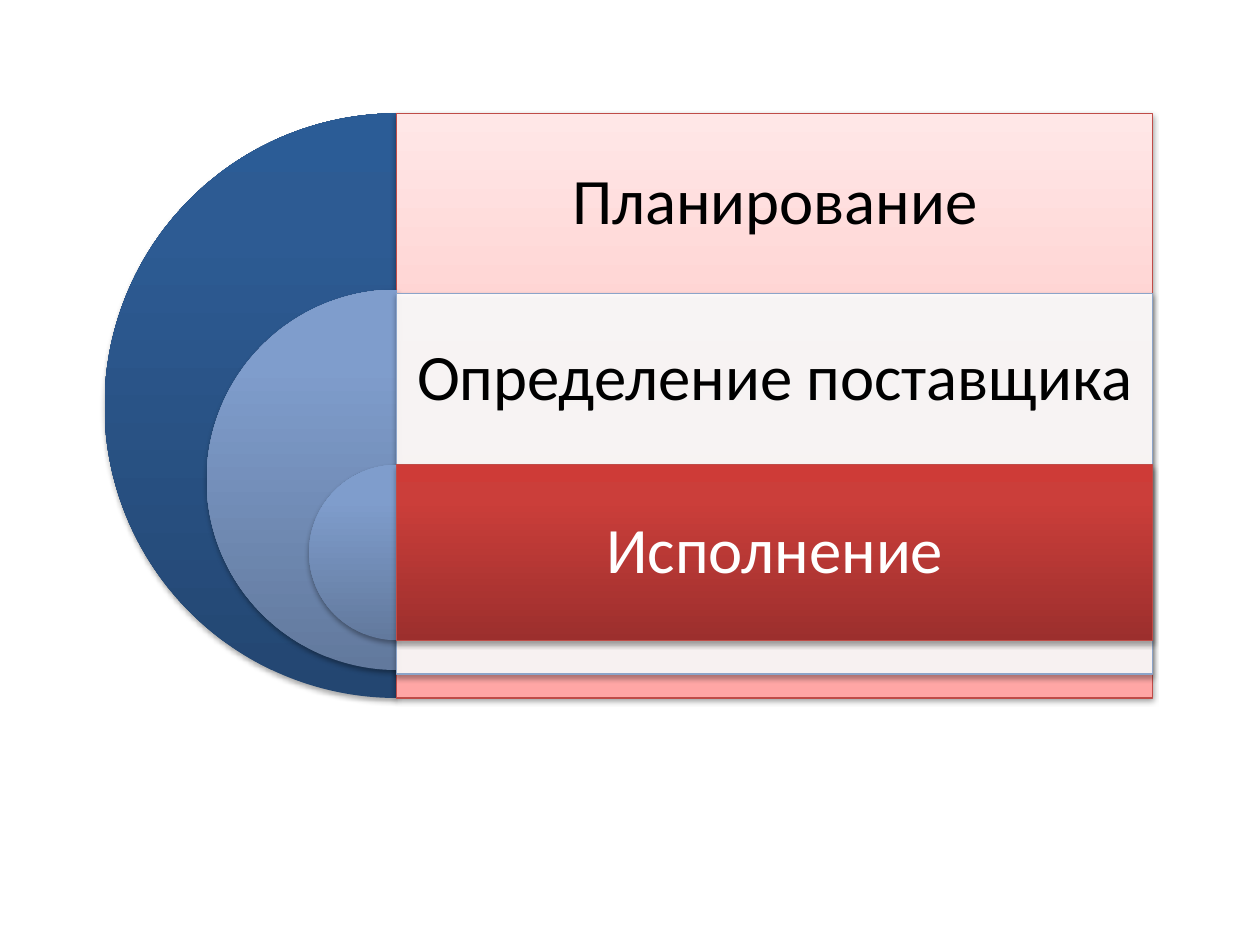
import pptx
import pptx.util
import pptx.dml.color
import pptx.enum.shapes
import pptx.enum.text
import pptx.oxml
from lxml import etree

Pt = pptx.util.Pt
RGBColor = pptx.dml.color.RGBColor
SHAPE = pptx.enum.shapes.MSO_SHAPE
A = "{http://schemas.openxmlformats.org/drawingml/2006/main}"

BLACK = RGBColor(0x00, 0x00, 0x00)
WHITE = RGBColor(0xFF, 0xFF, 0xFF)
RED_LINE = RGBColor(0xBF, 0x4C, 0x48)
BLUE_LINE = RGBColor(0x8C, 0xA4, 0xC9)

# Gradients run from bottom to top: (position in percent, colour)
DARK_BLUE = [(0, RGBColor(0x23, 0x46, 0x71)), (80, RGBColor(0x2D, 0x5B, 0x93)),
             (100, RGBColor(0x2B, 0x5C, 0x96))]
LIGHT_BLUE = [(0, RGBColor(0x62, 0x79, 0x9D)), (80, RGBColor(0x7F, 0x9D, 0xCC)),
              (100, RGBColor(0x7E, 0x9D, 0xCE))]
PINK = [(0, RGBColor(0xFF, 0xA6, 0xA5)), (35, RGBColor(0xFF, 0xC0, 0xBF)),
        (100, RGBColor(0xFF, 0xE7, 0xE7))]
RED = [(0, RGBColor(0x9C, 0x2F, 0x2D)), (80, RGBColor(0xCB, 0x3E, 0x3A)),
       (100, RGBColor(0xCE, 0x3B, 0x37))]

# Stages from back to front; a band's text sits above the next band
STAGES = [
    dict(text="Планирование", color=BLACK, pie_top=64.8, top=64.8, size=334.1,
         pie=DARK_BLUE, band=PINK, line=RED_LINE, shadow=(38, 1.6)),
    dict(text="Определение поставщика", color=BLACK, pie_top=165.5, top=167.8, size=217.4,
         pie=LIGHT_BLUE, band=None, line=BLUE_LINE, shadow=(35, 1.8)),
    dict(text="Исполнение", color=WHITE, pie_top=265.6, top=265.6, size=100.3,
         pie=LIGHT_BLUE, band=RED, line=RED_LINE, shadow=(35, 1.8)),
]
AXIS, BAND_WIDTH, INSET = 226.8, 432, 10.8


def add_color(parent, color, alpha=None):
    node = etree.SubElement(parent, A + "srgbClr", val=str(color))
    if alpha is not None:
        etree.SubElement(node, A + "alpha", val=str(alpha * 1000))


def fill_gradient(shape, stops):
    shape.fill.gradient()
    shape.fill.gradient_angle = 90
    stop_list = shape.element.spPr.find(f"{A}gradFill/{A}gsLst")
    for stop in list(stop_list):
        stop_list.remove(stop)
    for position, color in stops:
        add_color(etree.SubElement(stop_list, A + "gs", pos=str(position * 1000)), color)


def fill_translucent(shape, color, alpha):
    shape.fill.solid()
    shape.fill.fore_color.rgb = color
    node = shape.element.spPr.find(f"{A}solidFill/{A}srgbClr")
    etree.SubElement(node, A + "alpha", val=str(alpha * 1000))


def add_shadow(shape, alpha, distance):
    shape.shadow.inherit = False
    effects = shape.element.spPr.find(A + "effectLst")
    shadow = etree.SubElement(effects, A + "outerShdw", blurRad=str(Pt(3.1)),
                              dist=str(Pt(distance)), dir="5400000", rotWithShape="0")
    add_color(shadow, BLACK, alpha)


def write_text(shape, text, color=BLACK, size=37, font="Calibri", bottom=INSET):
    frame = shape.text_frame
    frame.word_wrap = True
    frame.vertical_anchor = pptx.enum.text.MSO_ANCHOR.MIDDLE
    frame.margin_left = frame.margin_right = frame.margin_top = Pt(INSET)
    frame.margin_bottom = Pt(bottom)
    para = frame.paragraphs[0]
    para.alignment = pptx.enum.text.PP_ALIGN.CENTER
    para.line_spacing = 0.9
    span = para.add_run()
    span.text = text
    span.font.size = Pt(size)
    span.font.name = font
    span.font.color.rgb = color


deck = pptx.Presentation()
deck.slide_width, deck.slide_height = Pt(720), Pt(540)
page = deck.slides.add_slide(deck.slide_layouts[6])

next_tops = [stage["top"] for stage in STAGES[1:]] + [None]
for stage, next_top in zip(STAGES, next_tops):
    size, top = stage["size"], stage["top"]

    # Left half circle, centred on the bands' left edge
    pie = page.shapes.add_shape(SHAPE.PIE, Pt(AXIS - size / 2), Pt(stage["pie_top"]),
                                Pt(size), Pt(size))
    pie.adjustments[0], pie.adjustments[1] = 54, 162
    fill_gradient(pie, stage["pie"])
    pie.line.fill.background()
    add_shadow(pie, 35, 1.8)

    # Band with the stage's name
    band = page.shapes.add_shape(SHAPE.RECTANGLE, Pt(AXIS), Pt(top), Pt(BAND_WIDTH), Pt(size))
    if stage["band"]:
        fill_gradient(band, stage["band"])
    else:
        fill_translucent(band, WHITE, 90)
    band.line.color.rgb = stage["line"]
    band.line.width = Pt(0.75)
    add_shadow(band, *stage["shadow"])
    covered = top + size - next_top if next_top else 0
    write_text(band, stage["text"], color=stage["color"], bottom=INSET + covered)

deck.save("out.pptx")
